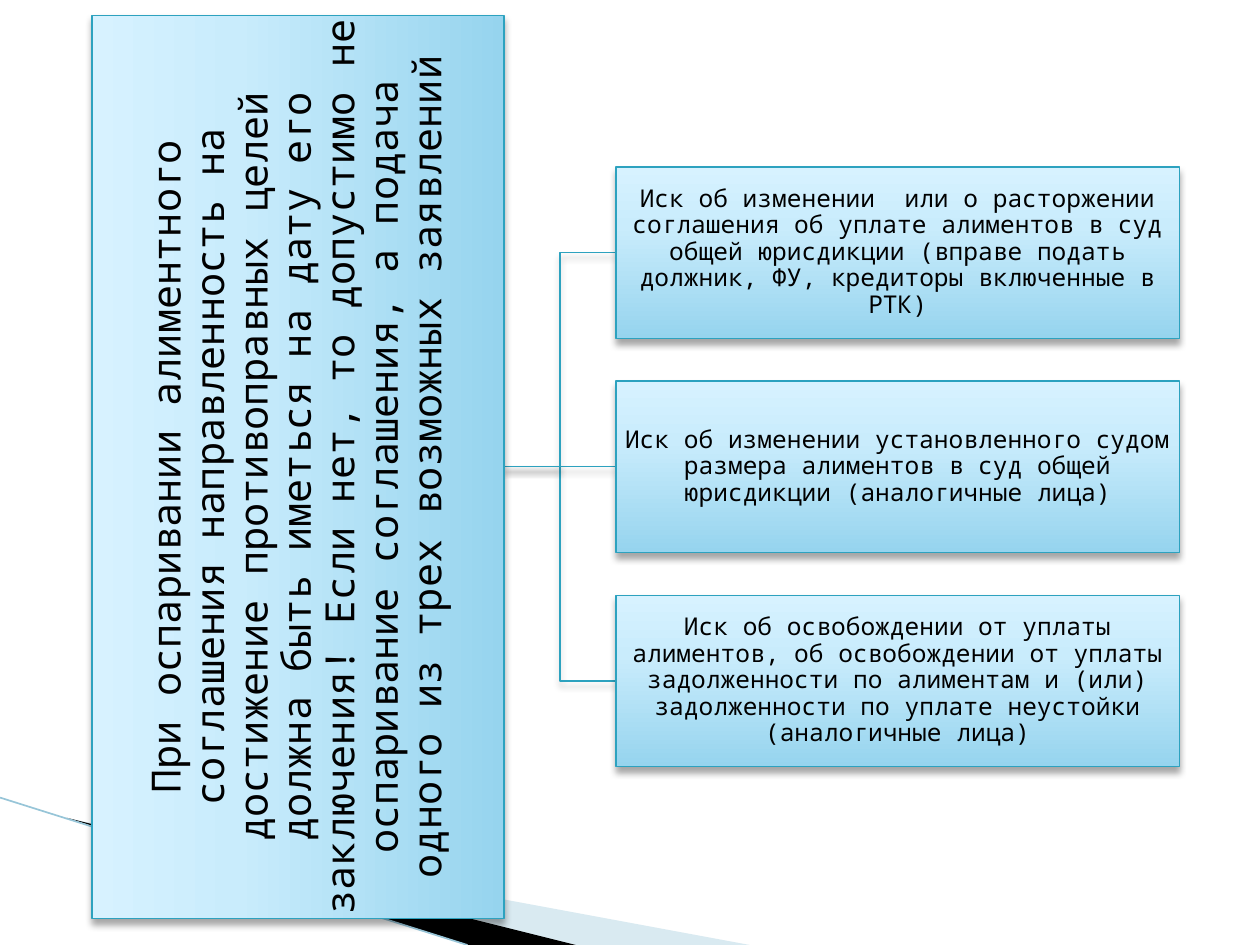
from lxml.etree import SubElement
from pptx import Presentation
from pptx.dml.color import RGBColor
from pptx.enum.shapes import MSO_CONNECTOR, MSO_SHAPE
from pptx.enum.text import MSO_ANCHOR, PP_ALIGN
from pptx.oxml import parse_xml
from pptx.oxml.ns import nsdecls, qn
from pptx.util import Inches, Pt

COLORS = {"edge": "2DA2BF", "low": "96D4EE", "mid": "C9ECFC", "high": "D7F2FF",
          "text": "000000", "wedge": "000000", "pale": "A0CBDC", "ray": "97C5D8"}
FONT = "Noto Sans Mono"
ROOT = ("При оспаривании алиментного соглашения направленность на достижение "
        "противоправных целей должна быть иметься на дату его заключения! Если нет, "
        "то допустимо не оспаривание соглашения, а подача одного из трех возможных "
        "заявлений")
CLAIMS = [
    "Иск об изменении  или о расторжении соглашения об уплате алиментов в суд общей "
    "юрисдикции (вправе подать должник, ФУ, кредиторы включенные в РТК)",
    "Иск об изменении установленного судом размера алиментов в суд общей юрисдикции "
    "(аналогичные лица)",
    "Иск об освобождении от уплаты алиментов, об освобождении от уплаты задолженности "
    "по алиментам и (или) задолженности по уплате неустойки (аналогичные лица)",
]


def color(name):
    """Return the named colour."""
    return RGBColor.from_string(COLORS[name])


def shade(shape):
    """Give a shape or connector a soft shadow below it."""
    shape._element.spPr.append(parse_xml(
        f'<a:effectLst {nsdecls("a")}><a:outerShdw blurRad="{Pt(4)}" dist="{Pt(3)}" '
        'dir="5400000" algn="ctr" rotWithShape="0"><a:srgbClr val="000000">'
        '<a:alpha val="35000"/></a:srgbClr></a:outerShdw></a:effectLst>'))


def stroke(shape, name, width):
    """Set the line colour and width in points."""
    shape.line.color.rgb = color(name)
    shape.line.width = Pt(width)


def blend(shape):
    """Fill a shape with the blue gradient, darkest at its foot."""
    stops = "".join(
        f'<a:gs pos="{pos * 1000}"><a:srgbClr val="{COLORS[name]}"/></a:gs>'
        for pos, name in ((0, "low"), (65, "mid"), (100, "high")))
    geom = shape._element.spPr.find(qn("a:prstGeom"))
    geom.addnext(parse_xml(
        f'<a:gradFill {nsdecls("a")} rotWithShape="1"><a:gsLst>{stops}</a:gsLst>'
        '<a:lin ang="16200000" scaled="0"/></a:gradFill>'))


def add_card(slide, box, text, size, pad, turn=0):
    """Place a gradient card with centred text in the box."""
    card = slide.shapes.add_shape(MSO_SHAPE.RECTANGLE, *map(Inches, box))
    card.rotation = turn
    blend(card)
    stroke(card, "edge", 0.75)
    shade(card)
    frame = card.text_frame
    style = {"word_wrap": True, "vertical_anchor": MSO_ANCHOR.MIDDLE}
    style.update({f"margin_{side}": Inches(pad)
                  for side in ("left", "top", "right", "bottom")})
    for key, value in style.items():
        setattr(frame, key, value)
    para = frame.paragraphs[0]
    para.alignment, para.line_spacing = PP_ALIGN.CENTER, 0.9
    run = para.add_run()
    run.text = text
    for key, value in {"name": FONT, "size": Pt(size)}.items():
        setattr(run.font, key, value)
    run.font.color.rgb = color("text")


def add_link(slide, kind, start, end):
    """Join two points with a shaded connector."""
    link = slide.shapes.add_connector(kind, *map(Inches, start + end))
    stroke(link, "edge", 0.75)
    shade(link)


def add_wedge(slide, points, name, alpha=100):
    """Draw a filled outline through the points."""
    spots = [(Inches(x), Inches(y)) for x, y in points]
    draft = slide.shapes.build_freeform(*spots[0])
    draft.add_line_segments(spots[1:])
    wedge = draft.convert_to_shape()
    wedge.shadow.inherit = False
    wedge.fill.solid()
    wedge.fill.fore_color.rgb = color(name)
    wedge.line.fill.background()
    if alpha < 100:
        tint = wedge._element.spPr.find(qn("a:solidFill"))[0]
        SubElement(tint, qn("a:alpha")).set("val", str(alpha * 1000))


def add_corner(slide, box):
    """Draw the wedges and the ray in the lower left corner."""
    x, y, w, h = box
    add_wedge(slide, [(x, y), (x + w, y + h), (x + 4.01, y + h)], "pale", 40)
    add_wedge(slide, [(x - 0.02, y - 0.01), (x + 4.02, y + h), (x + 3.17, y + h)],
              "wedge")
    ray = slide.shapes.add_connector(
        MSO_CONNECTOR.STRAIGHT, *map(Inches, (0, y - 0.17, x + 3.16, y + h)))
    stroke(ray, "ray", 0.95)
    SubElement(ray._element.spPr, qn("a:effectLst"))


def add_tree(slide, box):
    """Place the upright root card and its three linked claims."""
    x, y, w, h = box
    root, wide, tall, step = 3.27, 4.47, 1.36, 1.7
    mid, left = y + h / 2, x + w - wide
    rows = [mid + (i - 1) * step for i in range(len(CLAIMS))]
    for row in reversed(rows):
        kind = MSO_CONNECTOR.STRAIGHT if row == mid else MSO_CONNECTOR.ELBOW
        add_link(slide, kind, (x + root, mid), (left, row))
    add_card(slide, (x + (root - h) / 2, mid - root / 2, h, root), ROOT, 23, 0.02, 270)
    for row, text in zip(rows, CLAIMS):
        add_card(slide, (left, row - tall / 2, wide, tall), text, 14, 0.01)


def main():
    """Build and save the slide."""
    deck = Presentation()
    deck.slide_width, deck.slide_height = Inches(10), Inches(7.5)
    slide = deck.slides.add_slide(deck.slide_layouts[6])
    add_corner(slide, (0.55, 6.5, 5.4, 1))
    add_tree(slide, (0.73, 0.12, 8.63, 7.17))
    deck.save("out.pptx")


if __name__ == "__main__":
    main()
